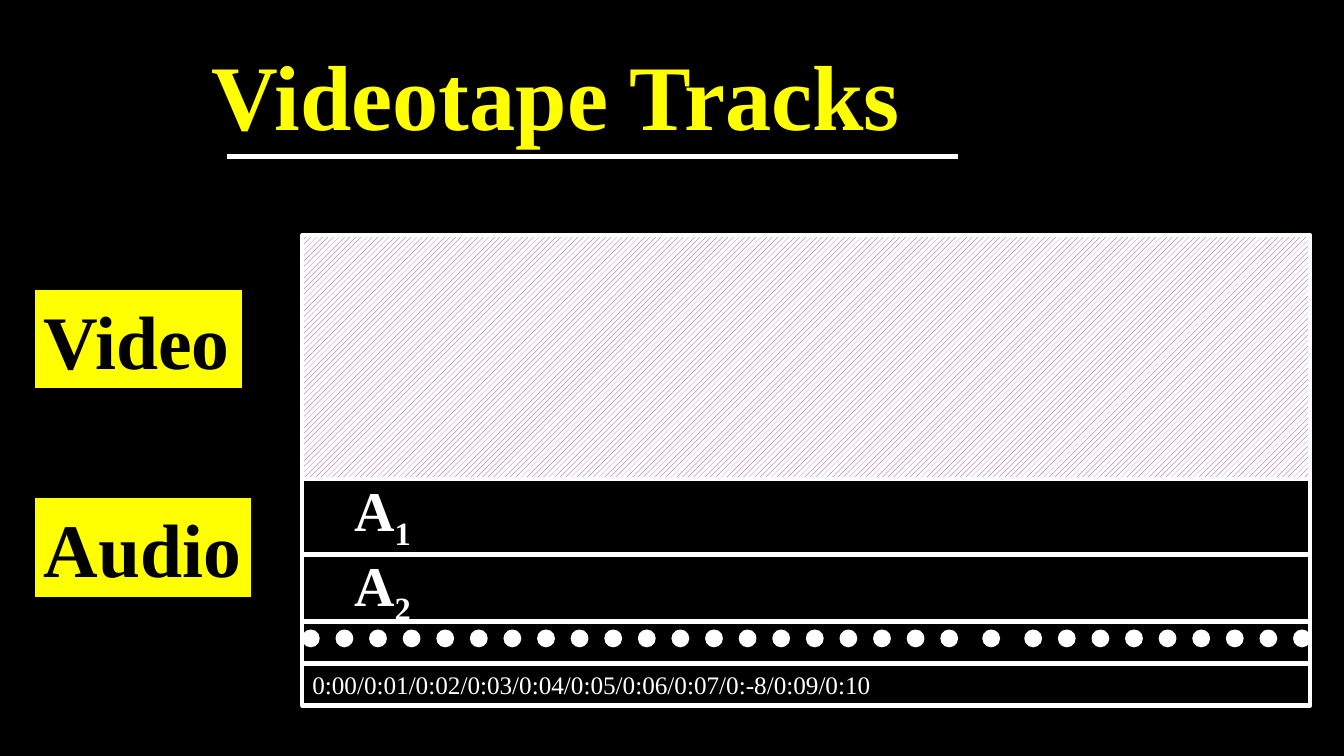
from lxml.etree import SubElement
from pptx import Presentation
from pptx.dml.color import RGBColor
from pptx.enum.dml import MSO_PATTERN
from pptx.enum.shapes import MSO_CONNECTOR, MSO_SHAPE
from pptx.enum.text import MSO_ANCHOR, MSO_AUTO_SIZE, PP_ALIGN
from pptx.oxml.ns import qn
from pptx.util import Emu, Pt

COLORS = {"black": "000000", "white": "FFFFFF", "yellow": "FFFF00", "plum": "932968"}
FONT = "Times New Roman"

TAPE_LEFT, TAPE_WIDTH = 288, 960
DOT_SIZE, DOT_STEP, DOT_TOP = 16, 32, 600


def px(n):
    return Emu(n * 9525)


def rgb(name):
    return RGBColor.from_string(COLORS[name])


def add_box(slide, kind, x, y, w, h, fill, line, line_width):
    sp = slide.shapes.add_shape(kind, px(x), px(y), px(w), px(h))
    sp.shadow.inherit = False
    sp.fill.solid()
    sp.fill.fore_color.rgb = rgb(fill)
    sp.line.color.rgb = rgb(line)
    sp.line.width = Pt(line_width)
    return sp


def add_track(slide, y, h):
    return add_box(slide, MSO_SHAPE.RECTANGLE, TAPE_LEFT, y, TAPE_WIDTH, h,
                   "black", "white", 3)


def add_dot(slide, x):
    add_box(slide, MSO_SHAPE.OVAL, x, DOT_TOP, DOT_SIZE, DOT_SIZE, "white", "white", 0.75)


def set_text(sp, text, size, color, bold=True, subscript=""):
    """Write one left-aligned, unwrapped line, with an optional subscript run."""
    tf = sp.text_frame
    tf.text = text
    tf.word_wrap = False
    tf.vertical_anchor = MSO_ANCHOR.TOP
    p = tf.paragraphs[0]
    p.alignment = PP_ALIGN.LEFT
    if subscript:
        r = p.add_run()
        r.text = subscript
        r.font._element.set("baseline", "-25000")
    for r in p.runs:
        r.font.name = FONT
        r.font.size = Pt(size)
        r.font.bold = bold
        r.font.color.rgb = rgb(color)
    return tf


def add_text(slide, x, y, w, h, text, size, color, subscript=""):
    sp = slide.shapes.add_textbox(px(x), px(y), px(w), px(h))
    tf = set_text(sp, text, size, color, subscript=subscript)
    tf.auto_size = MSO_AUTO_SIZE.SHAPE_TO_FIT_TEXT


def add_label(slide, y, w, h, text):
    sp = add_box(slide, MSO_SHAPE.RECTANGLE, 32, y, w, h, "yellow", "black", 2.25)
    tf = set_text(sp, text, 54, "black")
    tf.auto_size = MSO_AUTO_SIZE.SHAPE_TO_FIT_TEXT


def add_rule(slide, x1, x2, y):
    line = slide.shapes.add_connector(MSO_CONNECTOR.STRAIGHT, px(x1), px(y), px(x2), px(y))
    line.line.color.rgb = rgb("white")
    line.line.width = Pt(3)
    SubElement(line._element.spPr, qn("a:effectLst"))


def main():
    prs = Presentation()
    prs.slide_width, prs.slide_height = px(1280), px(720)
    s = prs.slides.add_slide(prs.slide_layouts[6])
    s.background.fill.solid()
    s.background.fill.fore_color.rgb = rgb("black")

    video = add_track(s, 224, 232)
    video.fill.patterned()
    video.fill.pattern = MSO_PATTERN.WIDE_UPWARD_DIAGONAL
    video.fill.fore_color.rgb = rgb("plum")
    video.fill.back_color.rgb = rgb("white")

    for y, h in [(456, 72), (592, 40), (528, 64)]:
        add_track(s, y, h)
    timecode = add_track(s, 632, 40)
    tf = set_text(timecode, "0:00/0:01/0:02/0:03/0:04/0:05/0:06/0:07/0:-8/0:09/0:10",
                  18, "white", bold=False)
    tf.vertical_anchor = MSO_ANCHOR.MIDDLE

    add_label(s, 275, 200, 96, "Video")
    for number, y in [("1", 448), ("2", 520)]:
        add_text(s, 328, y, 76, 74, "A", 40, "white", subscript=number)

    for start, count in [(TAPE_LEFT, 20), (936, 1), (976, 9)]:
        for i in range(count):
            add_dot(s, start + i * DOT_STEP)

    add_text(s, 192, 32, 682, 116, "Videotape Tracks", 66, "yellow")
    add_rule(s, 216, 912, 149)
    add_label(s, 473, 209, 97, "Audio")

    prs.save("out.pptx")


if __name__ == "__main__":
    main()
